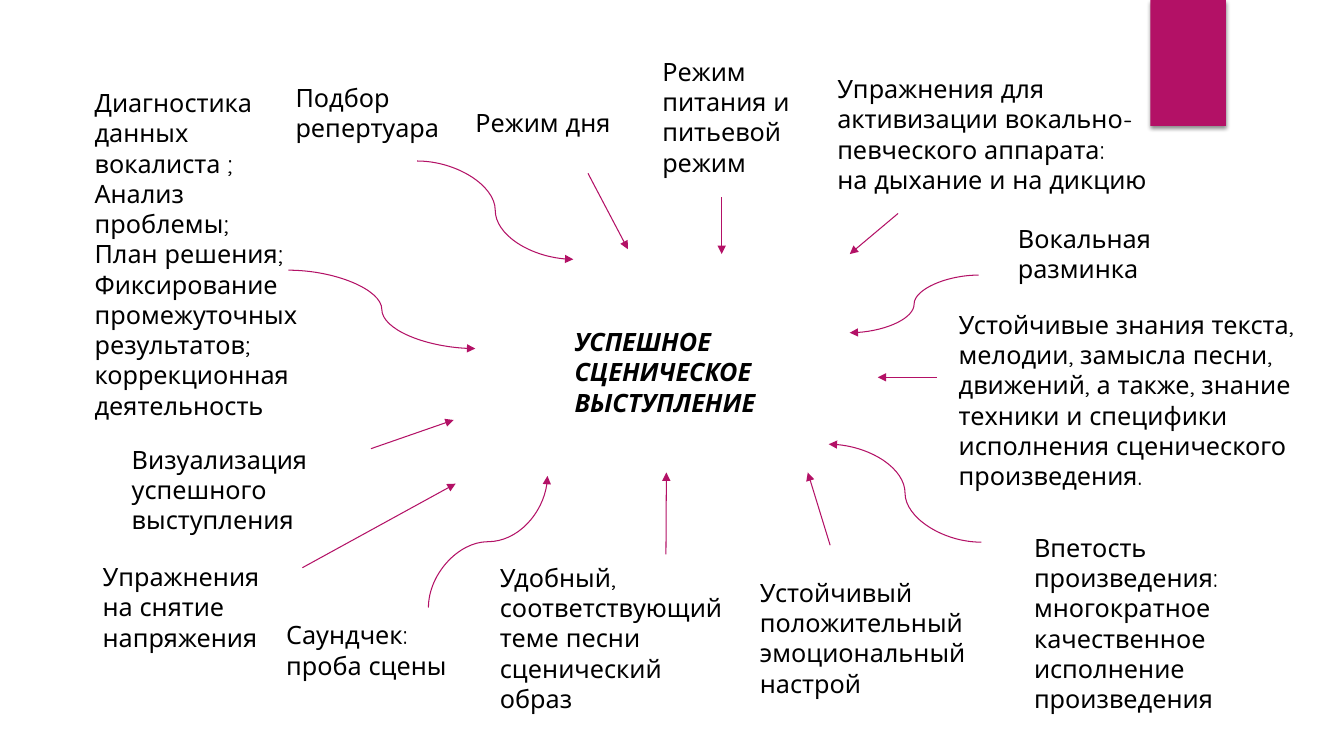
from lxml.etree import SubElement
from pptx import Presentation
from pptx.dml.color import RGBColor
from pptx.enum.shapes import MSO_CONNECTOR, MSO_SHAPE
from pptx.enum.text import MSO_ANCHOR, MSO_AUTO_SIZE, PP_ALIGN
from pptx.oxml.ns import qn
from pptx.util import Pt

HUES = {"accent": "B31166", "text": "000000", "shade": "000000"}
BODY = {"name": "Quicksand", "size": Pt(18), "bold": False, "italic": False}
HEAD = {**BODY, "bold": True, "italic": True}
FRAME = {"word_wrap": True, "auto_size": MSO_AUTO_SIZE.SHAPE_TO_FIT_TEXT,
         "vertical_anchor": MSO_ANCHOR.TOP,
         "margin_left": Pt(7.2), "margin_right": Pt(7.2),
         "margin_top": Pt(3.6), "margin_bottom": Pt(3.6)}
PARA = {"alignment": PP_ALIGN.LEFT, "line_spacing": 1.0,
        "space_before": Pt(0), "space_after": Pt(0)}


def apply(item, form):
    for key, value in form.items():
        setattr(item, key, value)


class Board:
    def __init__(self, slide):
        self.slide = slide
        self.shapes = slide.shapes

    def color(self, name):
        return RGBColor.from_string(HUES[name])

    def fill_text(self, shape, lines, style):
        frame = shape.text_frame
        frame.text = "\n".join(lines)
        apply(frame, FRAME)
        for para in frame.paragraphs:
            apply(para, PARA)
            apply(para.font, style)
            para.font.color.rgb = self.color("text")

    def title(self, box, text):
        shape = self.shapes.title
        apply(shape, dict(zip(("left", "top", "width", "height"), map(Pt, box))))
        self.fill_text(shape, [text], HEAD)

    def label(self, box, *lines):
        self.fill_text(self.shapes.add_textbox(*map(Pt, box)), lines, BODY)

    def ribbon(self, box):
        shape = self.shapes.add_shape(MSO_SHAPE.RECTANGLE, *map(Pt, box))
        shape.shadow.inherit = False
        shape.fill.solid()
        shape.fill.fore_color.rgb = self.color("accent")
        shape.line.fill.background()
        effects = shape.element.spPr.find(qn("a:effectLst"))
        shadow = SubElement(effects, qn("a:outerShdw"), blurRad=str(Pt(3)),
                            dist=str(Pt(2)), dir="5400000", rotWithShape="0")
        tint = SubElement(shadow, qn("a:srgbClr"), val=HUES["shade"])
        SubElement(tint, qn("a:alpha"), val="45000")

    def arrow(self, kind, x1, y1, x2, y2, turn=False):
        if turn:
            # Ends before a quarter turn clockwise about the centre
            cx, cy = (x1 + x2) / 2, (y1 + y2) / 2
            x1, y1, x2, y2 = (cx + y1 - cy, cy - x1 + cx,
                              cx + y2 - cy, cy - x2 + cx)
        link = self.shapes.add_connector(kind, *map(Pt, (x1, y1, x2, y2)))
        link.line.color.rgb = self.color("accent")
        link.line.width = Pt(0.75)
        props = link.element.spPr
        if turn:
            props.find(qn("a:xfrm")).set("rot", "5400000")
        SubElement(props.find(qn("a:ln")), qn("a:tailEnd"), type="triangle")
        SubElement(props, qn("a:effectLst"))


# Box (left, top, width, height), then paragraphs
LABELS = [
    ((60.5, 59, 168.5, 247), "Диагностика данных вокалиста ;", "Анализ проблемы;",
     "План решения;",
     "Фиксирование промежуточных результатов; коррекционная деятельность"),
    ((204, 55.2, 140, 51), "Подбор репертуара"),
    ((332.5, 73.2, 140, 29), "Режим дня"),
    ((466, 36.6, 140, 94.5), "Режим питания и питьевой режим"),
    ((591, 49, 244, 94.5),
     "Упражнения для активизации вокально-певческого аппарата:",
     "на дыхание и на дикцию"),
    ((720, 155.8, 140, 51), "Вокальная разминка"),
    ((677.7, 217.3, 258, 204),
     "Устойчивые знания текста, мелодии, замысла песни, движений, а также, "
     "знание техники и специфики исполнения сценического произведения."),
    ((731.5, 376.6, 184.5, 138),
     "Впетость произведения: многократное качественное исполнение произведения"),
    ((535.7, 408.7, 170, 94.5), "Устойчивый положительный эмоциональный настрой"),
    ((350, 398, 178, 116.5),
     "Удобный, соответствующий теме песни сценический образ"),
    ((197.3, 439, 140, 51), "Саундчек: проба сцены"),
    ((66.2, 397.5, 140, 72.7), "Упражнения на снятие напряжения"),
    ((87, 313.7, 140, 72.7), "Визуализация успешного выступления"),
]

# Start and end points
STRAIGHT = [
    (216, 405.5, 325.5, 345.5),
    (515.5, 141, 515.5, 181.5),
    (641.5, 152.5, 607, 181.5),
    (669, 269.5, 627, 269.5),
    (475.7, 396, 476, 337.5),
    (593, 389.5, 577, 337.5),
    (420, 123.8, 448.5, 178),
    (265, 320.5, 324, 300),
]
CURVED = [
    (298, 115, 409.5, 185.2),
    (699, 196.5, 607, 237.7),
    (701, 387.3, 592, 317.3),
    (206, 193, 339.5, 249),
]


def main():
    deck = Presentation()
    apply(deck, {"slide_width": Pt(960), "slide_height": Pt(540)})
    board = Board(deck.slides.add_slide(deck.slide_layouts[5]))

    # Corner ribbon and central theme
    board.ribbon((821.7, 0, 54, 90))
    board.title((403.2, 229.5, 161.5, 72.7), "УСПЕШНОЕ СЦЕНИЧЕСКОЕ ВЫСТУПЛЕНИЕ")

    # Factors around the theme
    for box, *lines in LABELS:
        board.label(box, *lines)

    # Arrows towards the theme
    for ends in STRAIGHT:
        board.arrow(MSO_CONNECTOR.STRAIGHT, *ends)
    for ends in CURVED:
        board.arrow(MSO_CONNECTOR.CURVE, *ends)
    board.arrow(MSO_CONNECTOR.CURVE, 306, 434, 391, 340, turn=True)

    deck.save("out.pptx")


if __name__ == "__main__":
    main()
